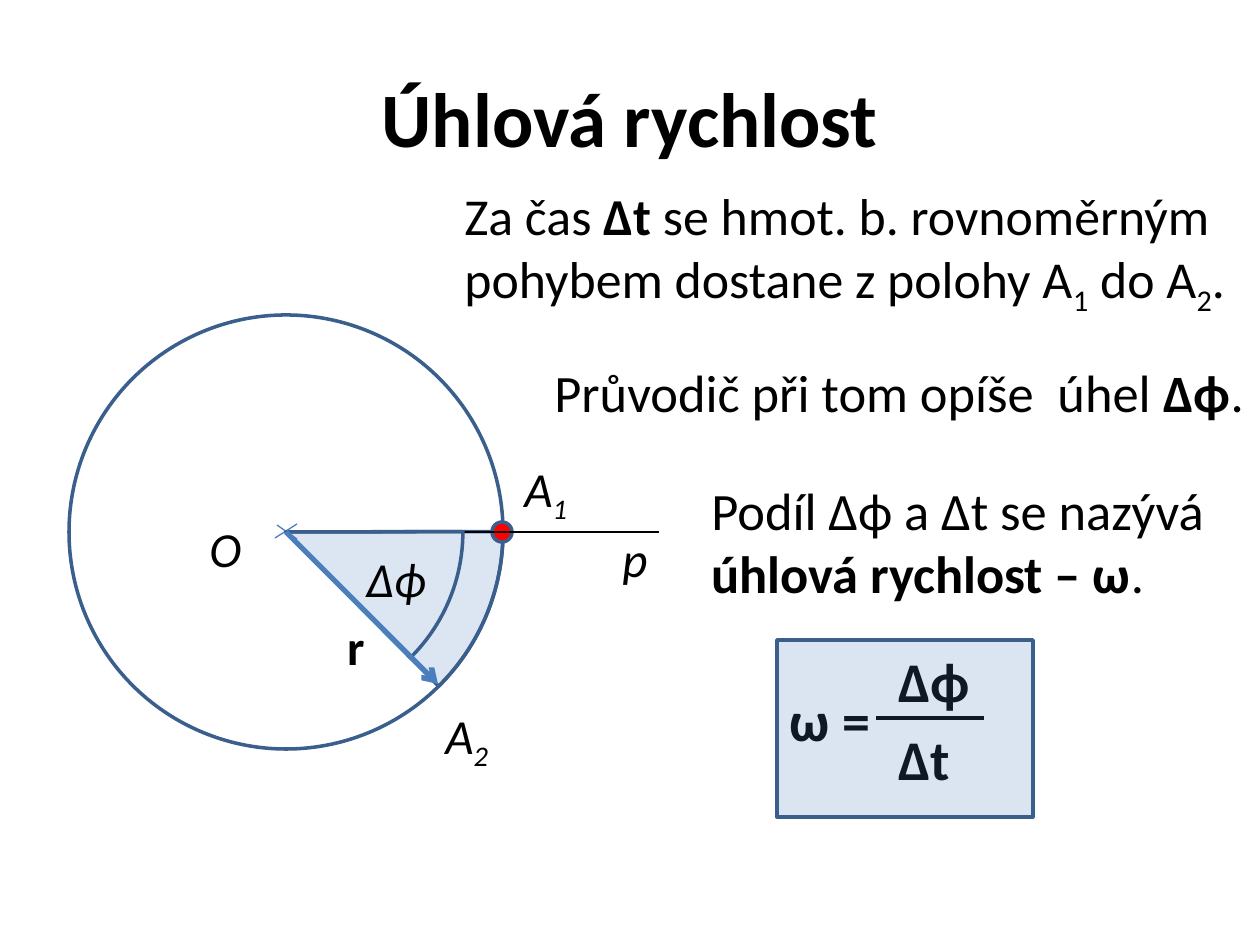
from lxml import etree
from pptx import Presentation
from pptx import util as u
from pptx.dml.color import RGBColor
from pptx.enum import shapes, text
from pptx.oxml.ns import qn

SCALE = 914400 / 126
FONT = "Calibri"
HUES = {"ink": "000000", "edge": "3A5F8C", "ray": "4B7EBC", "pale": "DCE6F2",
        "dot": "FF0000", "tint": "4F81BD"}
KIND = shapes.MSO_SHAPE
MID = (286, 532)
RADIUS = 217
TIP = (438, 684)
WEDGE = (215.94, 27.18)


def px(*nums):
    return [u.Emu(round(n * SCALE)) for n in nums]


def hue(name):
    return RGBColor.from_string(HUES[name])


def write(frame, runs, size=30, bold=False, slant=False, align=None):
    """Fill a frame with runs: plain strings, or (string, "bold" or "sub")."""
    frame.word_wrap = True
    para = frame.paragraphs[0]
    para.alignment = align
    for part in runs:
        words, mark = (part, None) if isinstance(part, str) else part
        run = para.add_run()
        run.text = words
        font = run.font
        font.name, font.size, font.italic = FONT, u.Pt(size), slant
        font.bold = bold or mark == "bold"
        font.color.rgb = hue("ink")
        if mark == "sub":
            run._r.get_or_add_rPr().set("baseline", "-25000")


def label(host, box, *runs, **style):
    write(host.add_textbox(*px(*box)).text_frame, runs, **style)


def form(host, kind, box, fill=None, alpha=None, adjust=()):
    shape = host.add_shape(kind, *px(*box))
    shape.shadow.inherit = False
    for i, value in enumerate(adjust):
        shape.adjustments[i] = value
    if fill:
        shape.fill.solid()
        shape.fill.fore_color.rgb = hue(fill)
    else:
        shape.fill.background()
    if alpha:
        tone = shape.fill._xPr.find(".//" + qn("a:srgbClr"))
        etree.SubElement(tone, qn("a:alpha")).set("val", str(alpha * 1000))
    shape.line.color.rgb = hue("edge")
    shape.line.width = u.Pt(2)


def disc(host, kind, radius, **style):
    """Place a round shape about the centre of the circle."""
    x, y = MID
    form(host, kind, (x - radius, y - radius, 2 * radius, 2 * radius), **style)


def line(host, start, end, color="ink", width=0.75, arrow=False):
    link = host.add_connector(shapes.MSO_CONNECTOR.STRAIGHT, *px(*start, *end))
    link.line.color.rgb = hue(color)
    link.line.width = u.Pt(width)
    if arrow:
        etree.SubElement(link.line._get_or_add_ln(), qn("a:tailEnd")).set("type", "arrow")
    etree.SubElement(link._element.spPr, qn("a:effectLst"))


def circle(host):
    disc(host, KIND.PIE, RADIUS, fill="pale", adjust=WEDGE)
    disc(host, KIND.OVAL, RADIUS)
    form(host, KIND.FLOWCHART_CONNECTOR, (492, 522, 20, 20), fill="dot")
    line(host, MID, (659, 532))
    cross = host.add_group_shape().shapes
    line(cross, (277, 525), (297, 539), "ray")
    line(cross, (297, 524), (275, 538), "ray")
    disc(host, KIND.PIE, 177, adjust=WEDGE)
    line(host, MID, TIP, "ray", 3, arrow=True)


def names(host):
    label(host, (335, 610, 79, 72), "r", size=28, bold=True)
    for x, y, wide, runs in (
            (610, 522, 79, ["p"]),
            (197, 512, 79, ["O"]),
            (354, 542, 118, ["Δϕ"]),
            (512, 452, 79, ["A", ("1", "sub")]),
            (433, 699, 79, ["A", ("2", "sub")])):
        label(host, (x, y, wide, 72), *runs, size=28, slant=True)


def prose(host):
    label(host, (452, 178, 808, 186), "Za čas ", ("Δt ", "bold"),
          "se hmot. b. rovnoměrným pohybem dostane z polohy A", ("1", "sub"),
          " do A", ("2", "sub"), ".", size=29.6)
    label(host, (542, 354, 718, 77), "Průvodič při tom opíše  úhel ",
          ("Δϕ", "bold"), ".")
    label(host, (699, 472, 532, 140), "Podíl Δϕ a Δt se nazývá ",
          ("úhlová rychlost – ω", "bold"), ".")


def formula(host):
    group = host.add_group_shape().shapes
    for x, y, words in ((777, 679, "ω ="), (886, 640, "Δϕ"), (886, 718, "Δt")):
        label(group, (x, y, 108, 88), words, size=32, bold=True)
    line(group, (876, 718), (984, 718), width=2)
    form(host, KIND.RECTANGLE, (777, 640, 256, 177), fill="tint", alpha=20)


def main():
    deck = Presentation()
    deck.slide_width, deck.slide_height = px(1260, 945)
    slide = deck.slides.add_slide(deck.slide_layouts[5])
    title = slide.shapes.title
    title.left, title.top, title.width, title.height = px(63, 38, 1134, 157)
    title.text_frame.vertical_anchor = text.MSO_ANCHOR.MIDDLE
    write(title.text_frame, ["Úhlová rychlost"], size=44, bold=True,
          align=text.PP_ALIGN.CENTER)
    for draw in (circle, names, prose, formula):
        draw(slide.shapes)
    deck.save("out.pptx")


if __name__ == "__main__":
    main()
